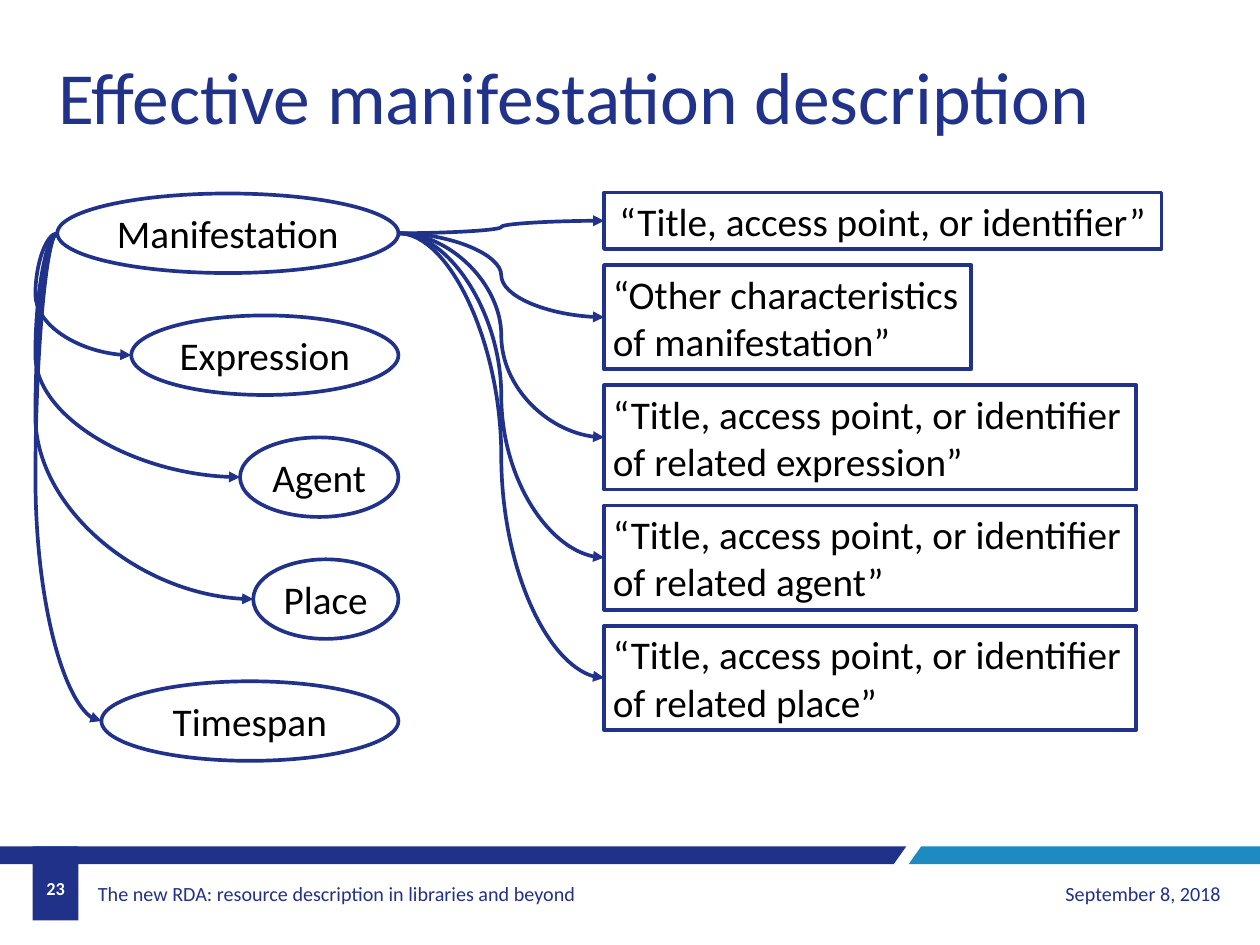
"""Builds the slide on effective manifestation description."""
from lxml.etree import SubElement
from pptx import Presentation
from pptx.dml.color import RGBColor
from pptx.enum.shapes import MSO_CONNECTOR, MSO_SHAPE
from pptx.enum.text import MSO_ANCHOR, PP_ALIGN
from pptx.oxml.ns import qn
from pptx.util import Cm, Pt

COLORS = {"navy": "203189", "line": "21328A", "blue": "1D8BC1",
          "white": "FFFFFF", "black": "000000"}
FONT = "Calibri"
WIDE, HIGH = 36.27, 27.2

TITLE = "Effective manifestation description"
ENTITIES = [("Manifestation", 9.82), ("Expression", 7.69), ("Agent", 4.56),
            ("Place", 4.18), ("Timespan", 8.55)]
VALUES = [
    (["“Title, access point, or identifier”"], 16.05),
    (["“Other characteristics", "of manifestation”"], 10.57),
    (["“Title, access point, or identifier", "of related expression”"], 15.32),
    (["“Title, access point, or identifier", "of related agent”"], 15.32),
    (["“Title, access point, or identifier", "of related place”"], 15.32),
]
FOOTER = [
    ("The new RDA: resource description in libraries and beyond",
     (2.64, 25.02, 16.66, 1.4), 16.4, "navy", PP_ALIGN.LEFT, False, 0.18),
    ("September 8, 2018",
     (26.09, 25.02, 9.3, 1.4), 16.4, "navy", PP_ALIGN.RIGHT, False, 0.25),
    ("23", (0.94, 24.87, 1.32, 1.4), 14.9, "white", PP_ALIGN.CENTER, True, 0.25),
]
BAR_TOP, BAR_END = 24.36, 24.87
BARS = [("navy", [(26.09, BAR_TOP), (0, BAR_TOP), (0, BAR_END), (25.73, BAR_END)]),
        ("blue", [(WIDE, BAR_TOP), (26.52, BAR_TOP), (26.16, BAR_END), (WIDE, BAR_END)])]
BADGE = (0.94, BAR_TOP, 1.32, 2.13)

OVAL_RIGHT, OVAL_TOP, OVAL_HIGH, OVAL_STEP = 11.47, 5.57, 2.29, 3.51
BOX_LEFT, BOX_TOP, BOX_GAP = 17.39, 5.54, 0.46
BOX_HIGH = {1: 1.63, 2: 3.0}
LANE = 1.02


def color(name):
    return RGBColor.from_string(COLORS[name])


def write(shape, lines, size, ink, align, bold=False):
    frame = shape.text_frame
    frame.text = "\n".join(lines)
    frame.vertical_anchor = MSO_ANCHOR.MIDDLE
    for para in frame.paragraphs:
        para.alignment = align
        para.font.name = FONT
        para.font.size = Pt(size)
        para.font.bold = bold
        para.font.color.rgb = color(ink)
    return frame


def paint(shape, fill, line=None):
    shape.shadow.inherit = False
    shape.fill.solid()
    shape.fill.fore_color.rgb = color(fill)
    if line:
        shape.line.color.rgb = color(line)
        shape.line.width = Pt(3)
    else:
        shape.line.fill.background()


def add_node(shapes, kind, place, lines, align):
    node = shapes.add_shape(kind, *map(Cm, place))
    paint(node, "white", "line")
    write(node, lines, 32, "black", align).word_wrap = False


def add_link(shapes, start, end, lane):
    link = shapes.add_connector(MSO_CONNECTOR.CURVE, *map(Cm, start + end))
    link.line.color.rgb = color("line")
    link.line.width = Pt(3)
    bend = round((lane - start[0]) / (end[0] - start[0]) * 100000)
    props = link._element.spPr
    guides = props.find(qn("a:prstGeom")).get_or_add_avLst()
    SubElement(guides, qn("a:gd"), name="adj1", fmla=f"val {bend}")
    SubElement(link.line._get_or_add_ln(), qn("a:tailEnd"),
               type="triangle", w="med", len="med")
    SubElement(props, qn("a:effectLst"))


def add_footer(shapes):
    for fill, points in BARS:
        spots = [(Cm(x), Cm(y)) for x, y in points]
        pen = shapes.build_freeform(*spots[0])
        pen.add_line_segments(spots[1:], close=True)
        paint(pen.convert_to_shape(), fill)
    paint(shapes.add_shape(MSO_SHAPE.RECTANGLE, *map(Cm, BADGE)), "navy")
    for text, place, size, ink, align, bold, inset in FOOTER:
        box = shapes.add_textbox(*map(Cm, place))
        frame = write(box, [text], size, ink, align, bold)
        frame.word_wrap = True
        frame.margin_left = frame.margin_right = Cm(inset)


def add_title(shapes):
    title = shapes.title
    title.left, title.top, title.width, title.height = map(
        Cm, (1.42, 1.32, 30.86, 2.82))
    write(title, [TITLE], 60, "line", PP_ALIGN.LEFT).word_wrap = False


def add_map(shapes):
    ovals, boxes = [], []
    for row, (name, width) in enumerate(ENTITIES):
        left, top = OVAL_RIGHT - width, OVAL_TOP + row * OVAL_STEP
        add_node(shapes, MSO_SHAPE.OVAL, (left, top, width, OVAL_HIGH),
                 [name], PP_ALIGN.CENTER)
        ovals.append((left, top + OVAL_HIGH / 2))
    top = BOX_TOP
    for lines, width in VALUES:
        high = BOX_HIGH[len(lines)]
        align = PP_ALIGN.CENTER if len(lines) == 1 else PP_ALIGN.LEFT
        add_node(shapes, MSO_SHAPE.RECTANGLE, (BOX_LEFT, top, width, high),
                 lines, align)
        boxes.append((BOX_LEFT, top + high / 2))
        top += high + BOX_GAP
    hub = ovals[0]
    for end in ovals[1:]:
        add_link(shapes, hub, end, LANE)
    for end in boxes:
        add_link(shapes, (OVAL_RIGHT, hub[1]), end, (OVAL_RIGHT + BOX_LEFT) / 2)


def main():
    deck = Presentation()
    deck.slide_width, deck.slide_height = Cm(WIDE), Cm(HIGH)
    shapes = deck.slides.add_slide(deck.slide_layouts[5]).shapes
    add_footer(shapes)
    add_title(shapes)
    add_map(shapes)
    deck.save("out.pptx")


if __name__ == "__main__":
    main()
